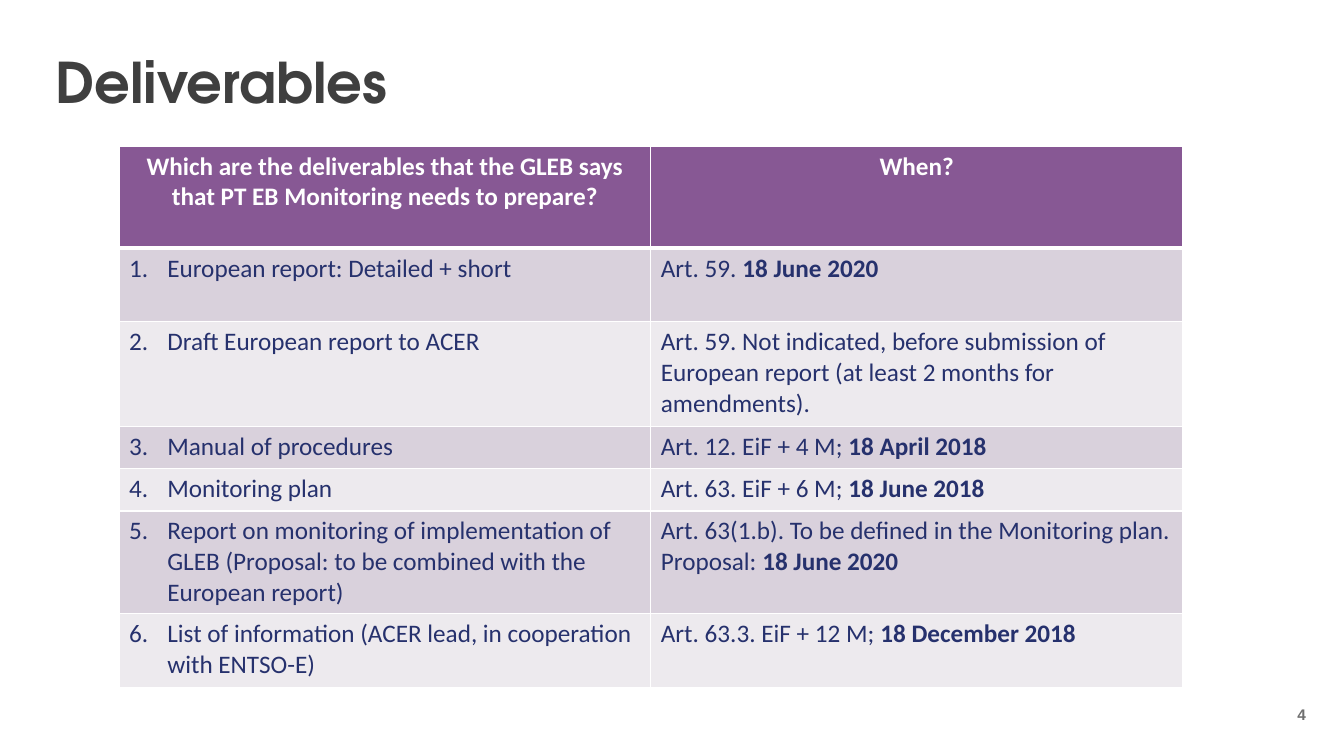
from lxml.etree import SubElement
from pptx import Presentation
from pptx.dml.color import RGBColor
from pptx.enum.text import MSO_ANCHOR, PP_ALIGN
from pptx.oxml.ns import qn
from pptx.util import Inches, Pt

COLORS = {
    "title": "3F3F3F",
    "number": "6F6F6F",
    "header": "875894",
    "odd_row": "D9D1DC",
    "even_row": "EDEAEE",
    "body": "26316D",
    "white": "FFFFFF",
}
HEADINGS = (
    "Which are the deliverables that the GLEB says that PT EB Monitoring needs to prepare?",
    "When?",
)
# Deliverable, legal basis, date in bold, row height
DELIVERABLES = [
    ("European report: Detailed + short", "Art. 59. ", "18 June 2020", 0.73),
    ("Draft European report to ACER",
     "Art. 59. Not indicated, before submission of European report "
     "(at least 2 months for amendments).", "", 1.04),
    ("Manual of procedures", "Art. 12. EiF + 4 M; ", "18 April 2018", 0.42),
    ("Monitoring plan", "Art. 63. EiF + 6 M; ", "18 June 2018", 0.42),
    ("Report on monitoring of implementation of GLEB (Proposal: to be combined "
     "with the European report)",
     "Art. 63(1.b). To be defined in the Monitoring plan. Proposal: ",
     "18 June 2020", 1.02),
    ("List of information (ACER lead, in cooperation with ENTSO-E)",
     "Art. 63.3. EiF + 12 M; ", "18 December 2018", 0.73),
]
HEADER_HEIGHT = 1.01


def add_text(paragraph, text, size=18, font="Calibri", color="body", bold=False):
    run = paragraph.add_run()
    run.text = text
    run.font.size = Pt(size)
    run.font.name = font
    run.font.bold = bold
    run.font.color.rgb = RGBColor.from_string(COLORS[color])


def add_text_box(slide, box, text, anchor, line_spacing=1.0, **text_format):
    shape = slide.shapes.add_textbox(*(Inches(length) for length in box))
    frame = shape.text_frame
    frame.word_wrap = True
    frame.vertical_anchor = anchor
    paragraph = frame.paragraphs[0]
    paragraph.line_spacing = line_spacing
    add_text(paragraph, text, **text_format)


def number_paragraph(paragraph, number):
    properties = paragraph._p.get_or_add_pPr()
    properties.set("marL", str(Inches(0.38)))
    properties.set("indent", str(-Inches(0.38)))
    SubElement(properties, qn("a:buFont"), typeface="+mj-lt")
    SubElement(properties, qn("a:buAutoNum"), type="arabicPeriod", startAt=str(number))


def style_cell(cell, fill, top=1, bottom=1):
    # Borders come before the fill in the cell properties
    properties = cell._tc.get_or_add_tcPr()
    for side, width in (("L", 1), ("R", 1), ("T", top), ("B", bottom)):
        line = SubElement(properties, qn(f"a:ln{side}"), w=str(Pt(width)))
        line_fill = SubElement(line, qn("a:solidFill"))
        SubElement(line_fill, qn("a:srgbClr"), val=COLORS["white"])
    cell.fill.solid()
    cell.fill.fore_color.rgb = RGBColor.from_string(COLORS[fill])


def add_deliverables_table(slide, left, top, width):
    heights = [HEADER_HEIGHT] + [entry[-1] for entry in DELIVERABLES]
    table = slide.shapes.add_table(
        len(heights), len(HEADINGS), Inches(left), Inches(top),
        Inches(width), Inches(sum(heights))).table
    for row, height in zip(table.rows, heights):
        row.height = Inches(height)

    # Header row
    for column, heading in enumerate(HEADINGS):
        cell = table.cell(0, column)
        style_cell(cell, "header", bottom=3)
        paragraph = cell.text_frame.paragraphs[0]
        paragraph.alignment = PP_ALIGN.CENTER
        add_text(paragraph, heading, color="white", bold=True)

    # Numbered deliverables with their dates
    for number, (deliverable, basis, date, _) in enumerate(DELIVERABLES, start=1):
        name_cell, date_cell = table.cell(number, 0), table.cell(number, 1)
        for cell in (name_cell, date_cell):
            style_cell(cell, "odd_row" if number % 2 else "even_row",
                       top=3 if number == 1 else 1)
        name_paragraph = name_cell.text_frame.paragraphs[0]
        number_paragraph(name_paragraph, number)
        add_text(name_paragraph, deliverable)
        date_paragraph = date_cell.text_frame.paragraphs[0]
        add_text(date_paragraph, basis)
        if date:
            add_text(date_paragraph, date, bold=True)


def main():
    presentation = Presentation()
    presentation.slide_width = Inches(13.33)
    presentation.slide_height = Inches(7.5)
    slide = presentation.slides.add_slide(presentation.slide_layouts[6])

    # Slide number, title and table
    add_text_box(slide, (12.77, 6.91, 0.49, 0.35), "4", MSO_ANCHOR.MIDDLE,
                 size=11, font="Arial", color="number", bold=True)
    add_text_box(slide, (0.45, 0.5, 12.2, 0.77), "Deliverables", MSO_ANCHOR.TOP,
                 line_spacing=0.9, size=40, font="TeX Gyre Adventor",
                 color="title", bold=True)
    add_deliverables_table(slide, 1.18, 1.45, 10.55)
    presentation.save("out.pptx")


if __name__ == "__main__":
    main()
